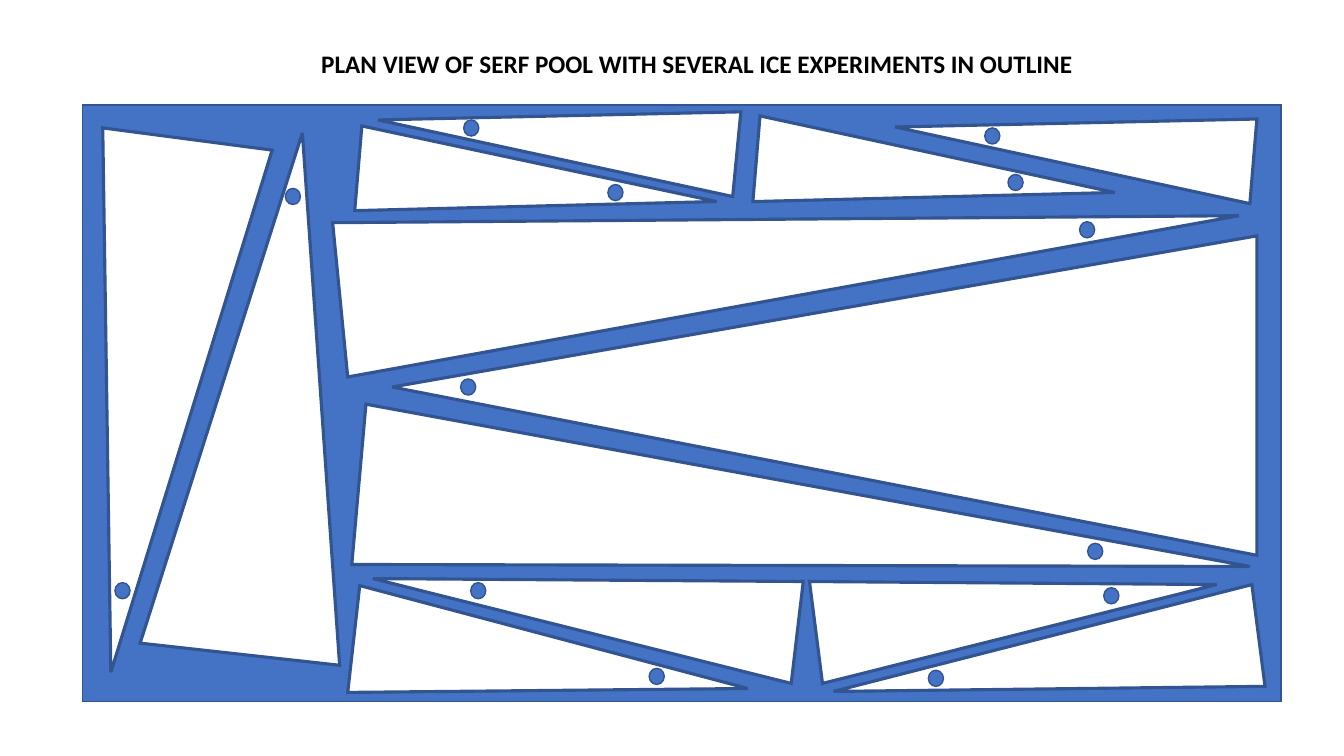
from dataclasses import dataclass

import lxml.etree
import pptx
import pptx.dml.color
import pptx.enum.shapes
import pptx.enum.text
import pptx.oxml.ns
import pptx.shapes.autoshape
import pptx.slide
import pptx.text.text
import pptx.util

Point = tuple[float, float]


@dataclass(frozen=True)
class Theme:
    water: str = "4472C4"
    edge: str = "325491"
    ice: str = "FFFFFF"
    ink: str = "000000"
    font: str = "Calibri"
    title_size: float = 18
    thin: float = 1
    thick: float = 2.25


@dataclass(frozen=True)
class Experiment:
    tip: Point
    corner: Point
    end: Point
    marker: Point


THEME = Theme()
MARKER_SIZE = (10.8, 11.5)
EXPERIMENTS = [
    Experiment((280.1, 276.5), (897.8, 168.5), (897.8, 396.7), (329, 270.7)),
    Experiment((892.8, 404.6), (251.3, 403.2), (261.4, 288.7), (776.9, 388.1)),
    Experiment((884.9, 154.1), (248.4, 269.3), (237.6, 159.1), (771.1, 158.4)),
    Experiment((595.4, 493.9), (894.2, 417.6), (903.6, 490.3), (663.1, 478.8)),
    Experiment((534.2, 491.8), (248.4, 494.6), (257, 418.3), (463.7, 477.4)),
    Experiment((79.2, 480.2), (73.4, 91.4), (194.4, 107.3), (82.1, 416.2)),
    Experiment((796.3, 137.5), (537.8, 144), (542.9, 82.8), (720, 124.6)),
    Experiment((639.4, 90.7), (897.8, 85), (892.8, 145.4), (703.4, 91.4)),
    Experiment((511.9, 144), (253.4, 150.5), (258.5, 90), (434.2, 131.8)),
    Experiment((270, 85.7), (529.2, 79.9), (523.4, 140.4), (331.2, 85.7)),
    Experiment((216, 95), (242.6, 475.2), (100.1, 459.4), (203.8, 134.6)),
    Experiment((266.4, 413.3), (573.8, 415.4), (565.2, 488.2), (336.2, 416.2)),
    Experiment((869, 417.6), (587.5, 488.2), (578.2, 415.4), (788.4, 419.8)),
]


def to_emu(point: Point) -> tuple[int, int]:
    return pptx.util.Pt(point[0]), pptx.util.Pt(point[1])


def rgb(code: str) -> pptx.dml.color.RGBColor:
    return pptx.dml.color.RGBColor.from_string(code)


def write(frame: pptx.text.text.TextFrame, text: str, *, size: float, color: str,
          bold: bool = False) -> None:
    frame.text = text
    paragraph = frame.paragraphs[0]
    paragraph.alignment = pptx.enum.text.PP_ALIGN.CENTER
    paragraph.font.name = THEME.font
    paragraph.font.size = pptx.util.Pt(size)
    paragraph.font.bold = bold
    paragraph.font.color.rgb = rgb(color)


def paint(shape: pptx.shapes.autoshape.Shape, fill: str, width: float) -> None:
    shape.shadow.inherit = False
    shape.fill.solid()
    shape.fill.fore_color.rgb = rgb(fill)
    shape.line.color.rgb = rgb(THEME.edge)
    shape.line.width = pptx.util.Pt(width)
    outline = shape.line.fill._xPr
    miter = lxml.etree.SubElement(outline, pptx.oxml.ns.qn("a:miter"))
    miter.set("lim", "800000")


def draw_title(slide: pptx.slide.Slide) -> None:
    title = slide.shapes.title
    title.left, title.top = to_emu((219.6, 31))
    title.width, title.height = to_emu((556.6, 28.8))
    frame = title.text_frame
    frame.word_wrap = False
    frame.auto_size = pptx.enum.text.MSO_AUTO_SIZE.SHAPE_TO_FIT_TEXT
    frame.vertical_anchor = pptx.enum.text.MSO_ANCHOR.TOP
    write(frame, "PLAN VIEW OF SERF POOL WITH SEVERAL ICE EXPERIMENTS IN OUTLINE",
          size=THEME.title_size, color=THEME.ink, bold=True)


def draw_pool(slide: pptx.slide.Slide) -> None:
    pool = slide.shapes.add_shape(pptx.enum.shapes.MSO_SHAPE.RECTANGLE,
                                  *to_emu((59, 74.9)), *to_emu((856.1, 426.2)))
    paint(pool, THEME.water, THEME.thin)


def draw_ice(slide: pptx.slide.Slide, experiment: Experiment) -> None:
    outline = slide.shapes.build_freeform(*to_emu(experiment.tip))
    outline.add_line_segments([to_emu(experiment.corner), to_emu(experiment.end)], close=True)
    paint(outline.convert_to_shape(), THEME.ice, THEME.thick)


def draw_marker(slide: pptx.slide.Slide, experiment: Experiment) -> None:
    marker = slide.shapes.add_shape(pptx.enum.shapes.MSO_SHAPE.OVAL,
                                    *to_emu(experiment.marker), *to_emu(MARKER_SIZE))
    paint(marker, THEME.water, THEME.thin)


def main() -> None:
    deck = pptx.Presentation()
    deck.slide_width, deck.slide_height = to_emu((960, 540))
    slide = deck.slides.add_slide(deck.slide_layouts.get_by_name("Title Only"))
    draw_title(slide)
    draw_pool(slide)
    for experiment in EXPERIMENTS:
        draw_ice(slide, experiment)
    for experiment in EXPERIMENTS:
        draw_marker(slide, experiment)
    deck.save("out.pptx")


if __name__ == "__main__":
    main()
